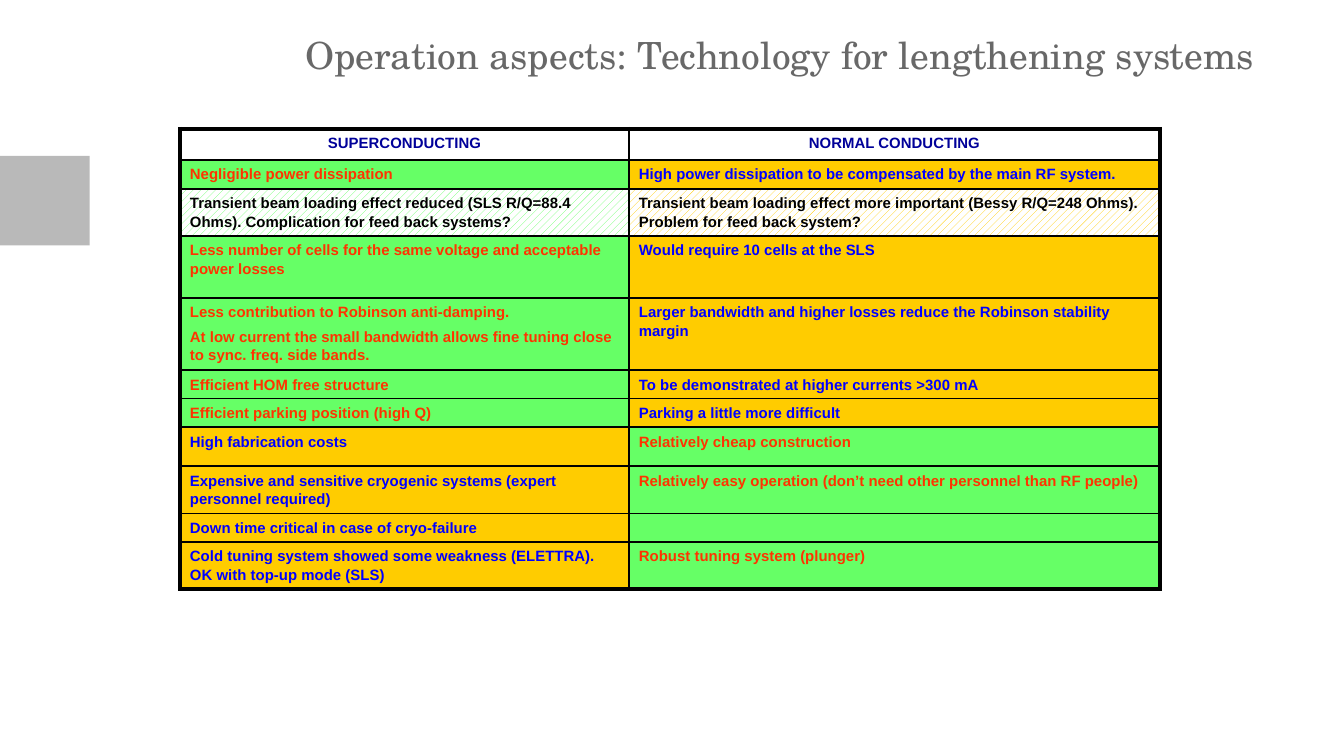
from lxml import etree
from pptx import Presentation
from pptx.dml.color import RGBColor
from pptx.enum import dml, shapes, text
from pptx.oxml.ns import qn
from pptx.util import Pt

GREEN, AMBER, WHITE = "66FF66", "FFCC00", "FFFFFF"
RED, BLUE, NAVY, BLACK = "FF3300", "0000FF", "000099", "000000"

# Cell kinds: fill, text colour, hatched
HEADING = (WHITE, NAVY, False)
GOOD = (GREEN, RED, False)
BAD = (AMBER, BLUE, False)
MIXED_GOOD = (GREEN, BLACK, True)
MIXED_BAD = (AMBER, BLACK, True)

COLUMN_WIDTHS = [240.5, 284.5]
# Row height, then kind and paragraphs of each column
COMPARISON = [
    (16.6, (HEADING, ["SUPERCONDUCTING"]), (HEADING, ["NORMAL CONDUCTING"])),
    (15.6, (GOOD, ["Negligible power dissipation"]),
     (BAD, ["High power dissipation to be compensated by the main RF system."])),
    (25.2, (MIXED_GOOD, ["Transient beam loading effect reduced (SLS R/Q=88.4 Ohms). "
                         "Complication for feed back systems?"]),
     (MIXED_BAD, ["Transient beam loading effect more important (Bessy R/Q=248 Ohms). "
                  "Problem for feed back system?"])),
    (33.2, (GOOD, ["Less number of cells for the same voltage and acceptable power losses"]),
     (BAD, ["Would require 10 cells at the SLS"])),
    (38.7, (GOOD, ["Less contribution to Robinson anti-damping.",
                   "At low current the small bandwidth allows fine tuning close to "
                   "sync. freq. side bands."]),
     (BAD, ["Larger bandwidth and higher losses reduce the Robinson stability margin"])),
    (15.3, (GOOD, ["Efficient HOM free structure"]),
     (BAD, ["To be demonstrated at higher currents >300 mA"])),
    (15.3, (GOOD, ["Efficient parking position (high Q)"]),
     (BAD, ["Parking a little more difficult"])),
    (20.9, (BAD, ["High fabrication costs"]), (GOOD, ["Relatively cheap construction"])),
    (25.4, (BAD, ["Expensive and sensitive cryogenic systems (expert personnel required)"]),
     (GOOD, ["Relatively easy operation (don’t need other personnel than RF people)"])),
    (15.2, (BAD, ["Down time critical in case of cryo-failure"]), (GOOD, [""])),
    (25.2, (BAD, ["Cold tuning system showed some weakness (ELETTRA).\vOK with top-up mode (SLS)"]),
     (GOOD, ["Robust tuning system (plunger)"])),
]


def color(value):
    return RGBColor.from_string(value)


def write(frame, paragraphs, font, size, ink, bold=False, align=text.PP_ALIGN.LEFT,
          spacing=1.0, gap=0):
    """Fill a text frame; gap is the space between paragraphs."""
    for index, wording in enumerate(paragraphs):
        paragraph = frame.paragraphs[0] if index == 0 else frame.add_paragraph()
        paragraph.text = wording
        paragraph.alignment = align
        paragraph.line_spacing = spacing
        paragraph.space_before = Pt(gap if index else 0)
        for run in paragraph.runs:
            run.font.name, run.font.size, run.font.bold = font, Pt(size), bold
            run.font.color.rgb = color(ink)
        if not wording:  # an empty cell keeps the height of its font size
            end = etree.SubElement(paragraph._p, qn("a:endParaRPr"))
            end.set("sz", str(int(size * 100)))


def set_borders(cell, widths):
    """Draw black borders; widths are left, right, top and bottom."""
    properties = cell._tc.get_or_add_tcPr()
    for side, width in zip("LRTB", widths):
        line = etree.SubElement(properties, qn(f"a:ln{side}"), w=str(Pt(width)))
        solid = etree.SubElement(line, qn("a:solidFill"))
        etree.SubElement(solid, qn("a:srgbClr"), val=BLACK)


class Deck:
    title_font, table_font = "TeX Gyre Schola", "Arial"
    gray, accent = "686868", "B9B9B9"
    outer, inner = 2.25, 1

    def __init__(self, width, height):
        self.presentation = Presentation()
        self.presentation.slide_width = Pt(width)
        self.presentation.slide_height = Pt(height)
        self.slide = self.presentation.slides.add_slide(self.presentation.slide_layouts[5])

    def block(self, *place):
        square = self.slide.shapes.add_shape(shapes.MSO_SHAPE.RECTANGLE, *map(Pt, place))
        square.shadow.inherit = False
        square.fill.solid()
        square.fill.fore_color.rgb = color(self.accent)
        square.line.fill.background()

    def title(self, wording, *place):
        heading = self.slide.shapes.title
        heading.left, heading.top, heading.width, heading.height = map(Pt, place)
        frame = heading.text_frame
        frame.margin_left = frame.margin_right = frame.margin_top = frame.margin_bottom = 0
        frame.vertical_anchor = text.MSO_ANCHOR.TOP
        frame.auto_size = text.MSO_AUTO_SIZE.NONE
        frame.word_wrap = True
        write(frame, [wording], self.title_font, 20, self.gray)

    def table(self, rows, widths, left, top):
        heights = [row[0] for row in rows]
        grid = self.slide.shapes.add_table(len(rows), len(widths), Pt(left), Pt(top),
                                           Pt(sum(widths)), Pt(sum(heights))).table
        grid.first_row = grid.horz_banding = False
        for column, width in zip(grid.columns, widths):
            column.width = Pt(width)
        for r, (height, *entries) in enumerate(rows):
            grid.rows[r].height = Pt(height)
            for c, (kind, paragraphs) in enumerate(entries):
                edges = [c == 0, c == len(widths) - 1, r == 0, r == len(rows) - 1]
                borders = [self.outer if edge else self.inner for edge in edges]
                self.cell(grid.cell(r, c), kind, paragraphs, borders)

    def cell(self, cell, kind, paragraphs, borders):
        shade, ink, hatched = kind
        cell.margin_left = cell.margin_right = Pt(5.3)
        cell.margin_top = cell.margin_bottom = Pt(2.5)
        set_borders(cell, borders)
        if hatched:
            cell.fill.patterned()
            cell.fill.pattern = dml.MSO_PATTERN.WIDE_UPWARD_DIAGONAL
            cell.fill.back_color.rgb = color(WHITE)
        else:
            cell.fill.solid()
        cell.fill.fore_color.rgb = color(shade)
        align = text.PP_ALIGN.CENTER if kind is HEADING else text.PP_ALIGN.LEFT
        write(cell.text_frame, paragraphs, self.table_font, 8, ink, bold=True,
              align=align, spacing=1.1, gap=3.2)


def main():
    deck = Deck(720, 405)
    deck.block(0, 83.5, 48, 48)
    deck.table(COMPARISON, COLUMN_WIDTHS, 96.5, 69)
    deck.title("Operation aspects: Technology for lengthening systems", 163.5, 17.3, 528.5, 30)
    deck.presentation.save("out.pptx")


if __name__ == "__main__":
    main()
